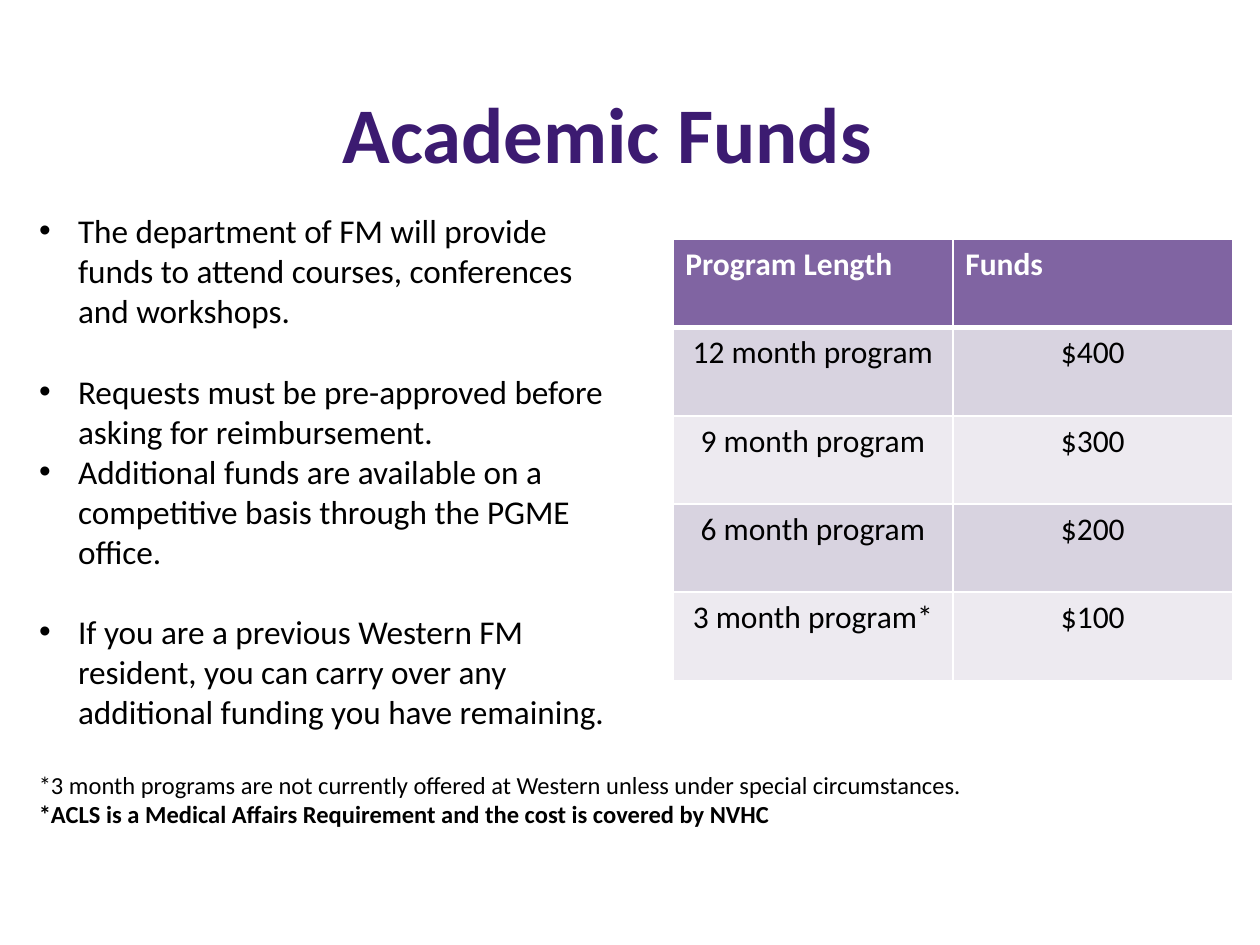
from dataclasses import dataclass

from lxml.etree import SubElement
from pptx import Presentation
from pptx.dml.color import RGBColor as Rgb
from pptx.enum.text import MSO_ANCHOR as Anchor, MSO_AUTO_SIZE as AutoSize, PP_ALIGN as Align
from pptx.oxml.ns import qn
from pptx.util import Pt


@dataclass(frozen=True)
class Theme:
    face: str = "Calibri"
    heading: str = "3C1B71"
    ink: str = "000000"
    white: str = "FFFFFF"
    header: str = "8064A2"
    bands: tuple = ("D8D3E0", "EDEAF0")
    title_size: float = 45
    list_size: float = 19
    table_size: float = 18
    note_size: float = 14
    list_leading: float = 22.9


class SlideBuilder:
    def __init__(self, slide, theme):
        self.slide, self.theme = slide, theme

    def style(self, paragraph, size, color, bold=False):
        font = paragraph.font
        font.name, font.size, font.bold = self.theme.face, Pt(size), bold
        font.color.rgb = Rgb.from_string(color)

    def place(self, shape, box):
        shape.left, shape.top, shape.width, shape.height = map(Pt, box)
        frame = shape.text_frame
        frame.word_wrap, frame.auto_size = True, AutoSize.NONE
        frame.vertical_anchor = Anchor.TOP
        return frame

    def title(self, text, box):
        frame = self.place(self.slide.shapes.title, box)
        frame.margin_top = Pt(5.4)
        frame.text = text
        heading = frame.paragraphs[0]
        heading.alignment, heading.space_after = Align.CENTER, Pt(12)
        self.style(heading, self.theme.title_size, self.theme.heading, True)

    def bullets(self, items, box, indent=22.3):
        frame = self.place(self.slide.placeholders[1], box)
        frame.text = "\n".join(text for text, _ in items)
        for point, (_, gap_lines) in zip(frame.paragraphs, items):
            props = point._p.get_or_add_pPr()
            props.set("marL", str(Pt(indent)))
            props.set("indent", str(Pt(-indent)))
            point.line_spacing = Pt(self.theme.list_leading)
            point.space_before = Pt(0)
            point.space_after = Pt(gap_lines * self.theme.list_leading)
            SubElement(props, qn("a:buFont"), typeface="Arial")
            SubElement(props, qn("a:buChar"), char="•")
            self.style(point, self.theme.list_size, self.theme.ink)

    def notes(self, lines, box):
        frame = self.place(self.slide.shapes.add_textbox(0, 0, 0, 0), box)
        frame.text = "\n".join(text for text, _ in lines)
        for line, (_, bold) in zip(frame.paragraphs, lines):
            self.style(line, self.theme.note_size, self.theme.ink, bold)

    def borders(self, cell, **widths):
        props = cell._tc.get_or_add_tcPr()
        for side in "LRTB":
            edge = SubElement(props, qn(f"a:ln{side}"), w=str(Pt(widths.get(side, 1))))
            fill = SubElement(edge, qn("a:solidFill"))
            SubElement(fill, qn("a:srgbClr"), val=self.theme.white)

    def table(self, rows, box):
        theme = self.theme
        table = self.slide.shapes.add_table(len(rows), len(rows[0]), *map(Pt, box)).table
        table.horz_banding = False
        for r, row in enumerate(rows):
            is_header = r == 0
            fill = theme.header if is_header else theme.bands[(r - 1) % 2]
            # The header is set off by a thicker rule
            rule = {0: {"B": 3}, 1: {"T": 3}}.get(r, {})
            for c, text in enumerate(row):
                cell = table.cell(r, c)
                self.borders(cell, **rule)
                cell.fill.solid()
                cell.fill.fore_color.rgb = Rgb.from_string(fill)
                cell.text = text
                entry = cell.text_frame.paragraphs[0]
                entry.alignment = Align.LEFT if is_header else Align.CENTER
                self.style(entry, theme.table_size,
                           theme.white if is_header else theme.ink, is_header)


def main():
    deck = Presentation()
    deck.slide_width, deck.slide_height = Pt(720), Pt(540)
    builder = SlideBuilder(deck.slides.add_slide(deck.slide_layouts[1]), Theme())

    # Heading
    builder.title("Academic Funds", (23, 43.2, 648, 46))

    # Funding by program length
    builder.table([
        ("Program Length", "Funds"),
        ("12 month program", "$400"),
        ("9 month program", "$300"),
        ("6 month program", "$200"),
        ("3 month program*", "$100"),
    ], (384.5, 136.8, 320, 252))

    # Footnotes: text, bold
    builder.notes([
        ("*3 month programs are not currently offered at Western unless under "
         "special circumstances.", False),
        ("*ACLS is a Medical Affairs Requirement and the cost is covered by NVHC", True),
    ], (15.1, 436.3, 690, 85))

    # Conditions: text, empty lines after
    builder.bullets([
        ("The department of FM will provide funds to attend courses, conferences "
         "and workshops.", 1),
        ("Requests must be pre-approved before asking for reimbursement.", 0),
        ("Additional funds are available on a competitive basis through the PGME office.", 1),
        ("If you are a previous Western FM resident, you can carry over any additional "
         "funding you have remaining.", 0),
    ], (15.1, 116.6, 352, 306.7))

    deck.save("out.pptx")


if __name__ == "__main__":
    main()
